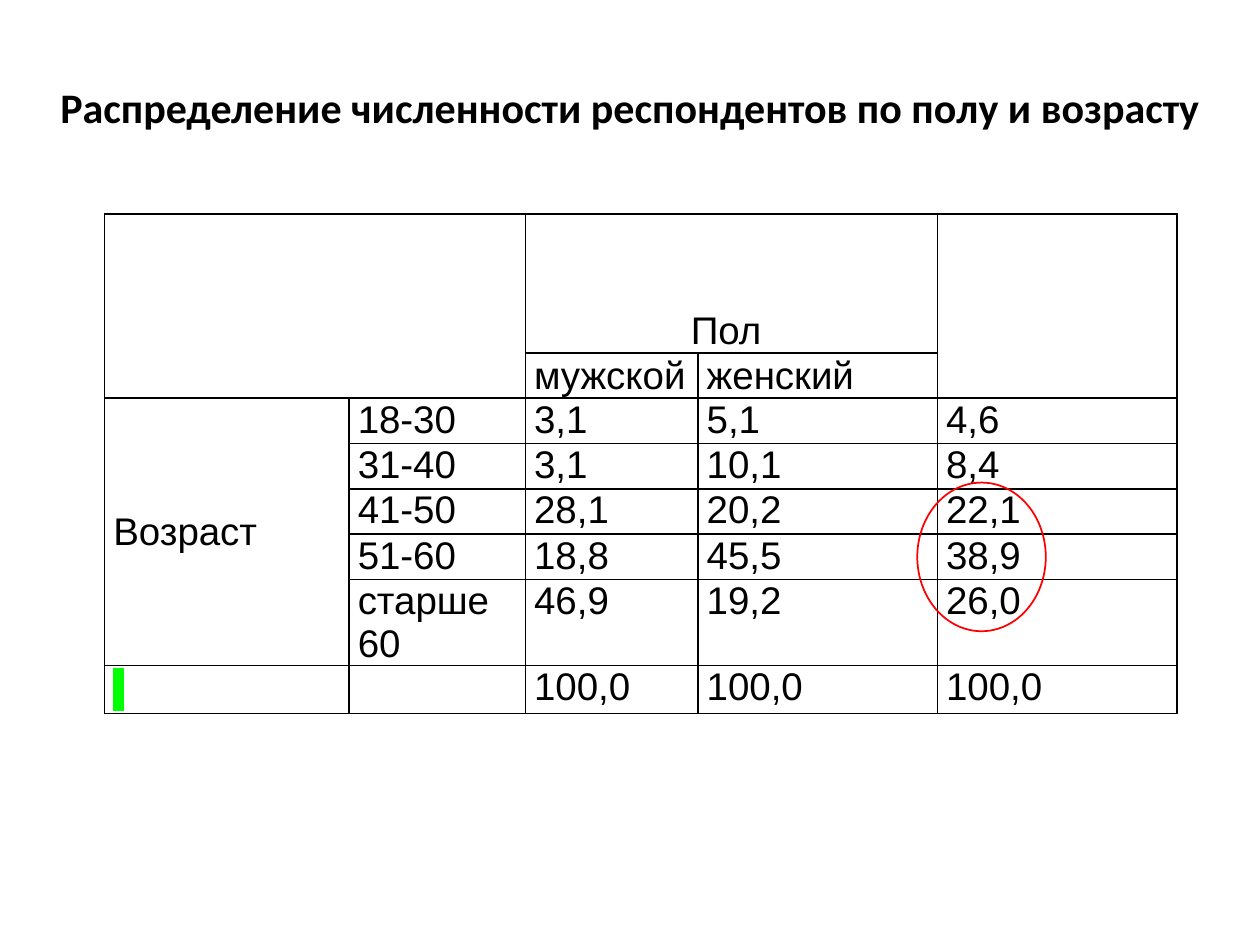
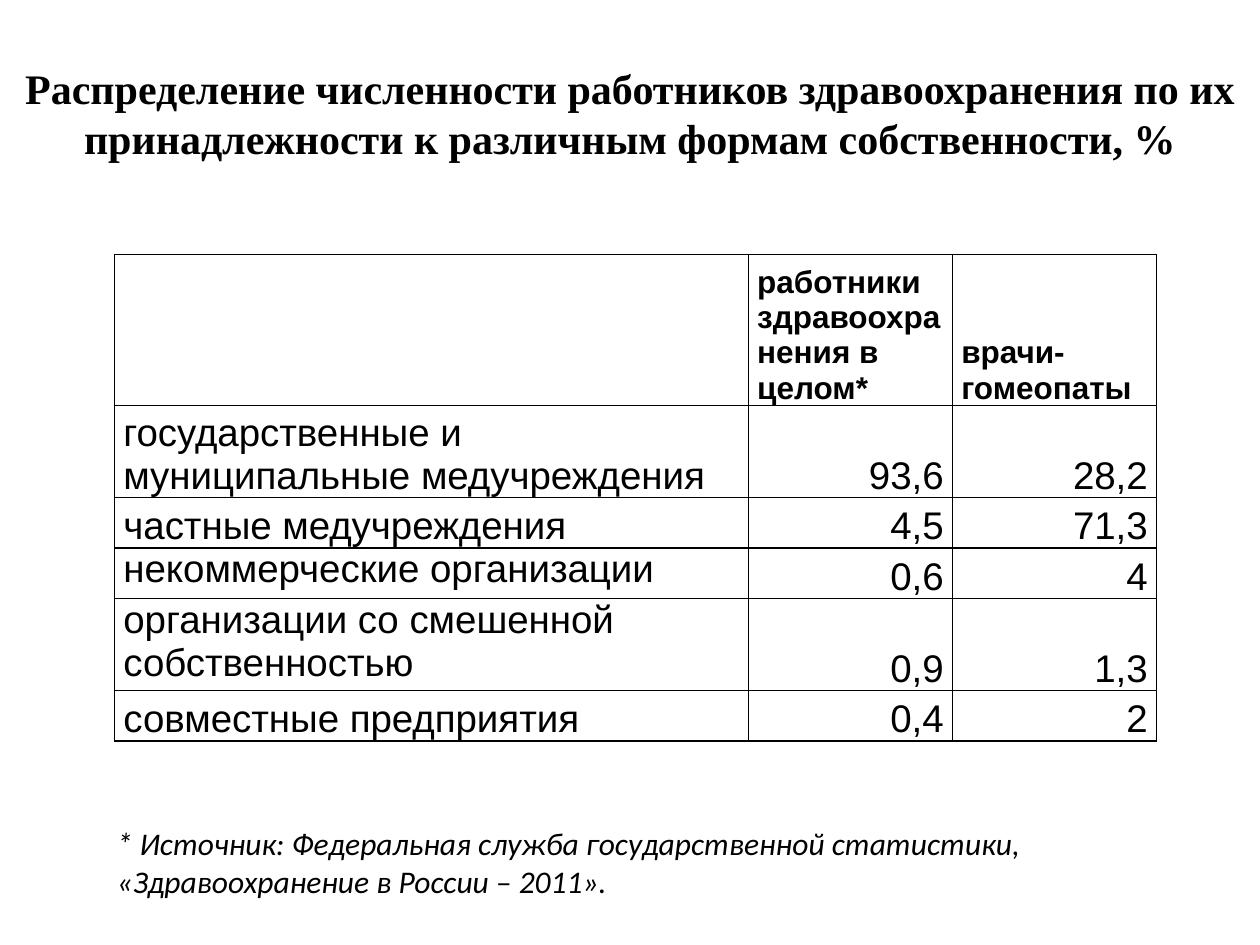
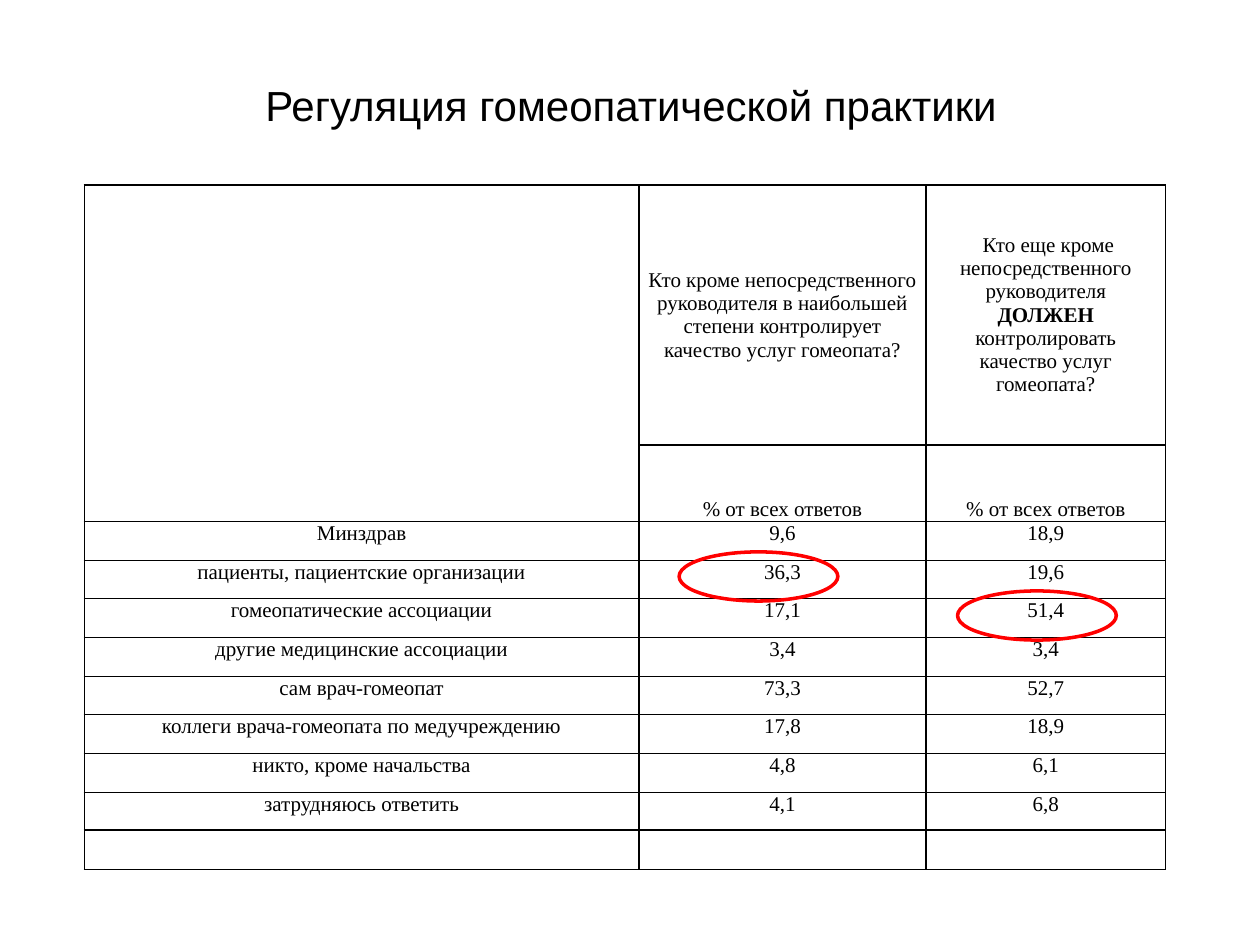
"""Build three slides of survey tables about homeopathic practice."""
import pptx
import pptx.dml.color
import pptx.enum.shapes
import pptx.enum.text
import pptx.oxml
import pptx.oxml.ns
import pptx.util

PX = 9144
INK, RED, LIME = "000000", "FF0000", "00FF00"
SANS, SERIF, PLAIN = "Arial", "Times New Roman", "Calibri"
ALIGN = pptx.enum.text.PP_ALIGN
ANCHOR = pptx.enum.text.MSO_ANCHOR
LEFT, MID, RIGHT = ALIGN.LEFT, ALIGN.CENTER, ALIGN.RIGHT
TOP, HALF, BASE = ANCHOR.TOP, ANCHOR.MIDDLE, ANCHOR.BOTTOM
NS = pptx.oxml.ns.nsdecls("a")


def px(*nums):
    return [pptx.util.Emu(num * PX) for num in nums]


def hue(code):
    return pptx.dml.color.RGBColor.from_string(code)


def write(frame, text, size=18, font=PLAIN, bold=False, slant=False,
          align=LEFT, anchor=TOP, mark=None):
    frame.word_wrap = True
    frame.vertical_anchor = anchor
    para = frame.paragraphs[0]
    para.alignment = align
    runs = [(text, bold)] if isinstance(text, str) else text
    for part, heavy in runs:
        run = para.add_run()
        run.text = part
        run.font.size = pptx.util.Pt(size)
        run.font.bold = heavy
        run.font.italic = slant
        run.font.color.rgb = hue(INK)
        if mark:
            run.font.fill._xPr.append(pptx.oxml.parse_xml(
                f'<a:highlight {NS}><a:srgbClr val="{mark}"/></a:highlight>'))
        run.font.name = font


class Deck:
    def __init__(self):
        self.show = pptx.Presentation()
        self.show.slide_width, self.show.slide_height = px(1000, 750)
        self.slide = None

    def page(self, title, box, **look):
        self.slide = self.show.slides.add_slide(self.show.slide_layouts[5])
        head = self.slide.shapes.title
        head.left, head.top, head.width, head.height = px(*box)
        head.text_frame.auto_size = pptx.enum.text.MSO_AUTO_SIZE.NONE
        write(head.text_frame, title, size=24, align=MID, **look)

    def note(self, text, box, **look):
        area = self.slide.shapes.add_textbox(*px(*box))
        write(area.text_frame, text, **look)

    def ring(self, box, width):
        kind = pptx.enum.shapes.MSO_SHAPE.OVAL
        oval = self.slide.shapes.add_shape(kind, *px(*box))
        oval.shadow.inherit = False
        oval.fill.background()
        oval.line.color.rgb = hue(RED)
        oval.line.width = pptx.util.Pt(width)

    def edge(self, cell):
        props = cell._tc.get_or_add_tcPr()
        for spot, side in enumerate("LRTB"):
            props.insert(spot, pptx.oxml.parse_xml(
                f'<a:ln{side} {NS} w="12700"><a:solidFill>'
                f'<a:srgbClr val="{INK}"/></a:solidFill></a:ln{side}>'))

    def table(self, left, top, cols, rows, cells, look, joins=()):
        box = px(left, top, sum(cols), sum(rows))
        grid = self.slide.shapes.add_table(len(rows), len(cols), *box).table
        grid.first_row = grid.horz_banding = False
        for col, width in zip(grid.columns, px(*cols)):
            col.width = width
        for row, height in zip(grid.rows, px(*rows)):
            row.height = height
        for r, line in enumerate(cells):
            for c, text in enumerate(line):
                cell = grid.cell(r, c)
                cell.margin_left, cell.margin_right = px(7, 7)
                cell.margin_top = cell.margin_bottom = 0
                cell.fill.background()
                self.edge(cell)
                if text:
                    fmt = look(r, c)
                    cell.vertical_anchor = fmt.get("anchor", TOP)
                    fmt["anchor"] = None
                    write(cell.text_frame, text, **fmt)
        for first, last in joins:
            grid.cell(*first).merge(grid.cell(*last))


def age_look(r, c):
    fmt = dict(size=22, font=SANS)
    if r < 2:
        fmt.update(anchor=BASE, align=LEFT if r else MID)
    elif c == 0:
        fmt.update(anchor=HALF, mark=LIME if r == 7 else None)
    return fmt


def form_look(r, c):
    if r == 0:
        return dict(size=18, font=SANS, bold=True, anchor=BASE)
    return dict(size=22, font=SANS, align=RIGHT if c else LEFT,
                anchor=TOP if c == 0 and r in (3, 4) else BASE)


def rule_look(r, c):
    return dict(size=12, font=SERIF, align=MID,
                anchor={0: HALF, 1: BASE}.get(r, TOP))


def ages(deck):
    deck.page("Распределение численности респондентов по полу и возрасту",
              (0, 60, 1000, 50), font=PLAIN, bold=True)
    deck.table(83, 170, [194, 140, 137, 190, 190],
               [110] + [36] * 5 + [68, 38], [
        ["", "", "Пол ", "", ""],
        ["", "", "мужской", "женский", ""],
        ["Возраст", "18-30", "3,1", "5,1", "4,6"],
        ["", "31-40", "3,1", "10,1", "8,4"],
        ["", "41-50", "28,1", "20,2", "22,1"],
        ["", "51-60", "18,8", "45,5", "38,9"],
        ["", "старше 60", "46,9", "19,2", "26,0"],
        [" ", "", "100,0", "100,0", "100,0"],
    ], age_look, [((0, 0), (1, 1)), ((0, 2), (0, 3)),
                  ((0, 4), (1, 4)), ((2, 0), (6, 0))])
    deck.ring((728, 383, 102, 118), 1)


def forms(deck):
    deck.page("Распределение численности работников здравоохранения по их "
              "принадлежности к различным формам собственности, %",
              (0, 44, 1000, 91), font=SERIF, bold=True, anchor=HALF)
    deck.table(91, 202, [503, 162, 162], [120, 73, 40, 40, 73, 40], [
        ["", "работники здравоохранения в целом*", "врачи-гомеопаты"],
        ["государственные и муниципальные медучреждения", "93,6", "28,2"],
        ["частные медучреждения", "4,5", "71,3"],
        ["некоммерческие организации", "0,6", "4"],
        ["организации со смешенной собственностью", "0,9", "1,3"],
        ["совместные предприятия", "0,4", "2"],
    ], form_look)
    deck.note("* Источник: Федеральная служба государственной статистики, "
              "«Здравоохранение в России – 2011».",
              (83, 649, 850, 101), slant=True)


def rules(deck):
    deck.page("Регуляция гомеопатической практики",
              (51, 21, 900, 125), font=SANS, anchor=HALF)
    share = "% от всех ответов"
    deck.table(67, 147, [440, 228, 190], [206, 61] + [31, 30, 31] * 3, [
        ["", "Кто кроме непосредственного руководителя в наибольшей "
             "степени контролирует качество услуг гомеопата?",
         [(" Кто еще кроме непосредственного руководителя ", False),
          ("ДОЛЖЕН", True),
          (" контролировать качество услуг гомеопата?", False)]],
        ["", share, share],
        ["Минздрав", "9,6", "18,9"],
        ["пациенты, пациентские организации", "36,3", "19,6"],
        ["гомеопатические ассоциации", "17,1", "51,4"],
        ["другие медицинские ассоциации", "3,4", "3,4"],
        ["сам врач-гомеопат", "73,3", "52,7"],
        ["коллеги врача-гомеопата по медучреждению", "17,8", "18,9"],
        ["никто, кроме начальства", "4,8", "6,1"],
        ["затрудняюсь ответить", "4,1", "6,8"],
        ["", "", ""],
    ], rule_look, [((0, 0), (1, 0))])
    for left, top in ((539, 438), (760, 469)):
        deck.ring((left, top, 126, 39), 2)


def main():
    deck = Deck()
    for build in (ages, forms, rules):
        build(deck)
    deck.show.save("out.pptx")


if __name__ == "__main__":
    main()
